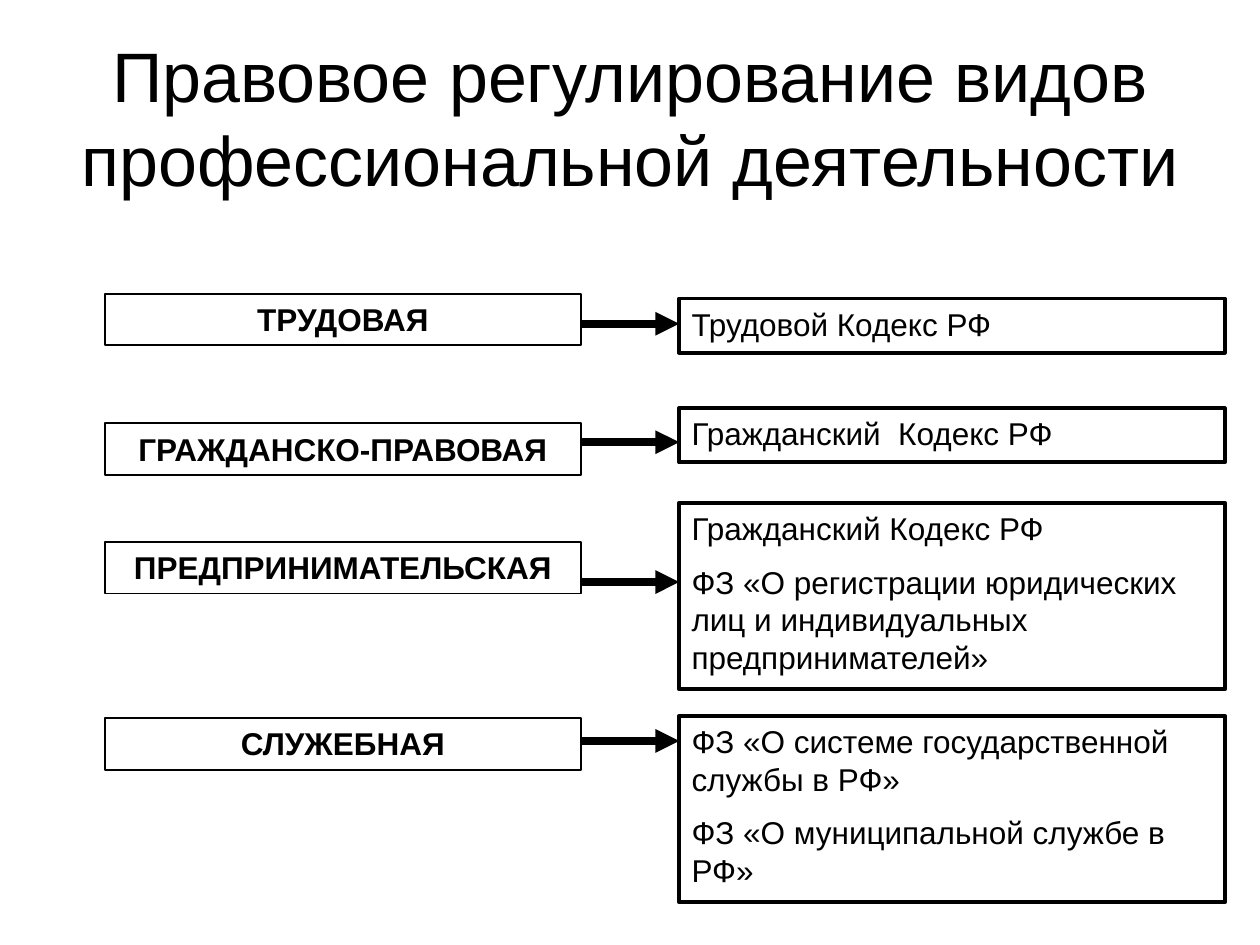
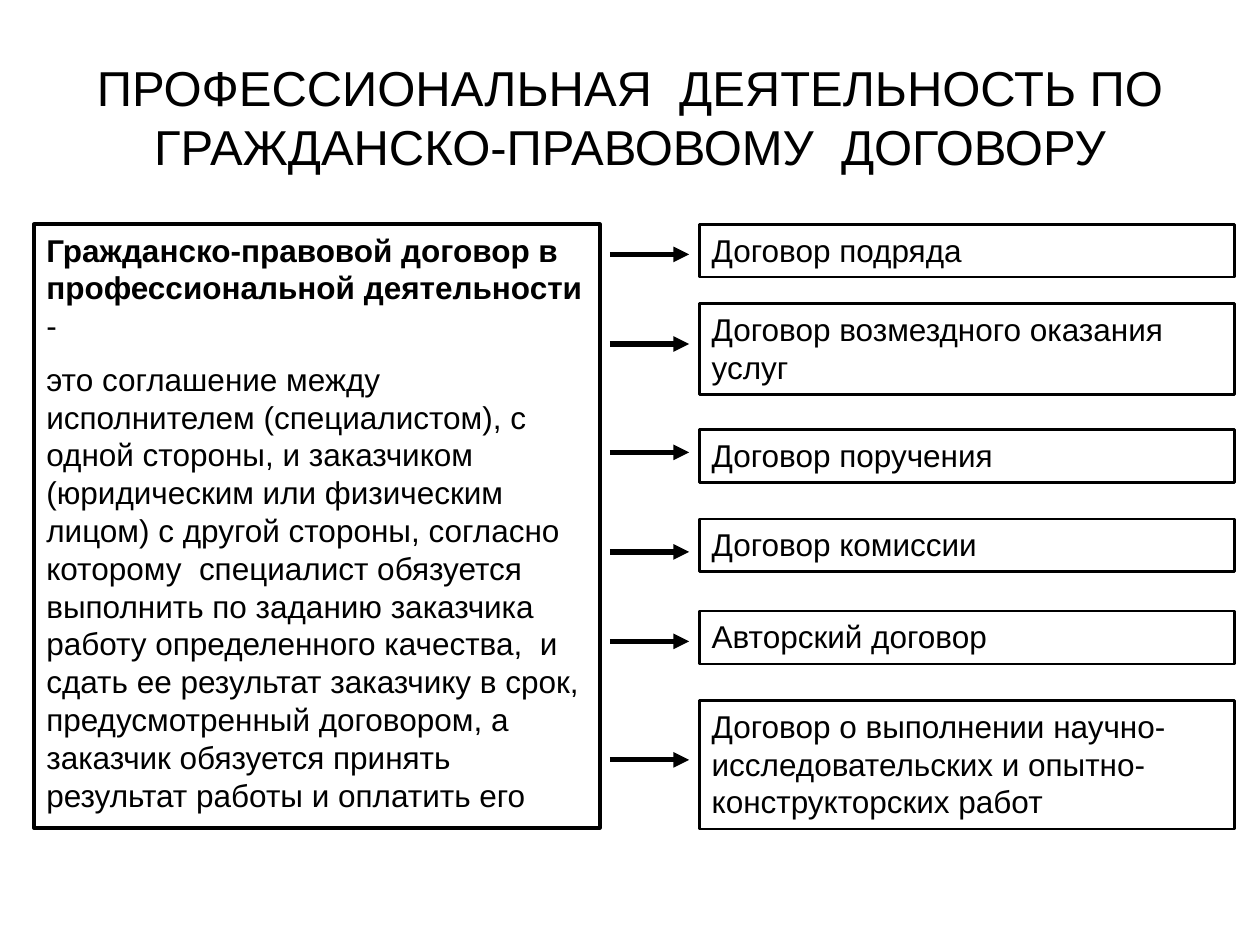
from pptx import Presentation
from pptx.dml.color import RGBColor
from pptx.enum import shapes, text
from pptx.oxml import xmlchemy as xml
from pptx.util import Pt

BLACK = RGBColor(0, 0, 0)
FONT = "Arial"
LEFT, CENTER = text.PP_ALIGN.LEFT, text.PP_ALIGN.CENTER


class Deck:
    def __init__(self):
        self.prs = Presentation()
        self.prs.slide_width, self.prs.slide_height = Pt(720), Pt(540)
        self.slide = None

    def page(self, title, size):
        self.slide = self.prs.slides.add_slide(self.prs.slide_layouts[6])
        frame = self.slide.shapes.add_textbox(Pt(36), Pt(21.6), Pt(648), Pt(90)).text_frame
        frame.vertical_anchor = text.MSO_ANCHOR.MIDDLE
        self.words(frame, [[(title, False)]], size, CENTER)

    def words(self, frame, paras, size, align):
        frame.word_wrap = True
        for num, runs in enumerate(paras):
            para = frame.add_paragraph() if num else frame.paragraphs[0]
            para.alignment = align
            if num:
                para.space_before = Pt(size / 2)
            for words, bold in runs:
                run = para.add_run()
                run.text = words
                run.font.name, run.font.size = FONT, Pt(size)
                run.font.bold = bold
                run.font.color.rgb = BLACK

    def box(self, x, y, w, h, paras, weight, align=LEFT):
        box = self.slide.shapes.add_shape(
            shapes.MSO_SHAPE.RECTANGLE, Pt(x), Pt(y), Pt(w), Pt(h))
        box.shadow.inherit = False
        box.fill.background()
        box.line.color.rgb, box.line.width = BLACK, Pt(weight)
        frame = box.text_frame
        frame.vertical_anchor = text.MSO_ANCHOR.TOP
        frame.auto_size = text.MSO_AUTO_SIZE.SHAPE_TO_FIT_TEXT
        self.words(frame, paras, 18, align)

    def arrow(self, x, end, y, weight):
        line = self.slide.shapes.add_connector(
            shapes.MSO_CONNECTOR.STRAIGHT, Pt(x), Pt(y), Pt(end), Pt(y))
        line.line.color.rgb, line.line.width = BLACK, Pt(weight)
        tail = xml.OxmlElement("a:tailEnd")
        tail.set("type", "triangle")
        props = line._element.spPr
        props.get_or_add_ln().append(tail)
        props.append(xml.OxmlElement("a:effectLst"))


def kinds(deck):
    deck.page("Правовое регулирование видов профессиональной деятельности", 40)
    rows = [
        ("ТРУДОВАЯ", 167.8, 185, 170.6, 31, ["Трудовой Кодекс РФ"]),
        ("ГРАЖДАНСКО-ПРАВОВАЯ", 241.9, 252.7, 233.3, 31, ["Гражданский  Кодекс РФ"]),
        ("ПРЕДПРИНИМАТЕЛЬСКАЯ", 309.6, 332.6, 287.3, 106.6,
         ["Гражданский Кодекс РФ",
          "ФЗ «О регистрации юридических лиц и индивидуальных предпринимателей»"]),
        ("СЛУЖЕБНАЯ", 410.4, 423.4, 409, 106.6,
         ["ФЗ «О системе государственной службы в РФ»",
          "ФЗ «О муниципальной службе в РФ»"]),
    ]
    for kind, top, mid, y, h, laws in rows:
        deck.box(59.8, top, 272.2, 29.5, [[(kind, True)]], 1, CENTER)
        deck.box(388.1, y, 311.8, h, [[(law, False)] for law in laws], 2.25)
        deck.arrow(332, 388.1, mid, 4.5)


def deals(deck):
    deck.page("ПРОФЕССИОНАЛЬНАЯ  ДЕЯТЕЛЬНОСТЬ ПО ГРАЖДАНСКО-ПРАВОВОМУ  ДОГОВОРУ", 28)
    deck.box(19.4, 128.2, 323.3, 344.9, [
        [("Гражданско-правовой договор в профессиональной деятельности", True),
         (" -", False)],
        [("это соглашение между исполнителем (специалистом), с одной стороны, "
          "и заказчиком (юридическим или физическим лицом) с другой стороны, "
          "согласно которому  специалист обязуется выполнить по заданию заказчика "
          "работу определенного качества,  и сдать ее результат заказчику в срок, "
          "предусмотренный договором, а заказчик обязуется принять результат "
          "работы и оплатить его", False)],
    ], 2.25)
    rows = [
        ("Договор подряда", 128.2, 30.2, 145.4),
        ("Договор возмездного оказания услуг", 173.5, 51.8, 196.6),
        ("Договор поручения", 245.5, 30.2, 258.5),
        ("Договор комиссии", 296.6, 30.2, 315.4),
        ("Авторский договор", 349.2, 30.2, 366.5),
        ("Договор о выполнении научно-исследовательских и "
         "опытно-конструкторских работ", 400.3, 73.4, 434.2),
    ]
    for deal, y, h, mid in rows:
        deck.box(399.6, y, 306, h, [[(deal, False)]], 1.5)
        deck.arrow(348.5, 393.8, mid, 3)


def main():
    deck = Deck()
    kinds(deck)
    deals(deck)
    deck.prs.save("out.pptx")


if __name__ == "__main__":
    main()
